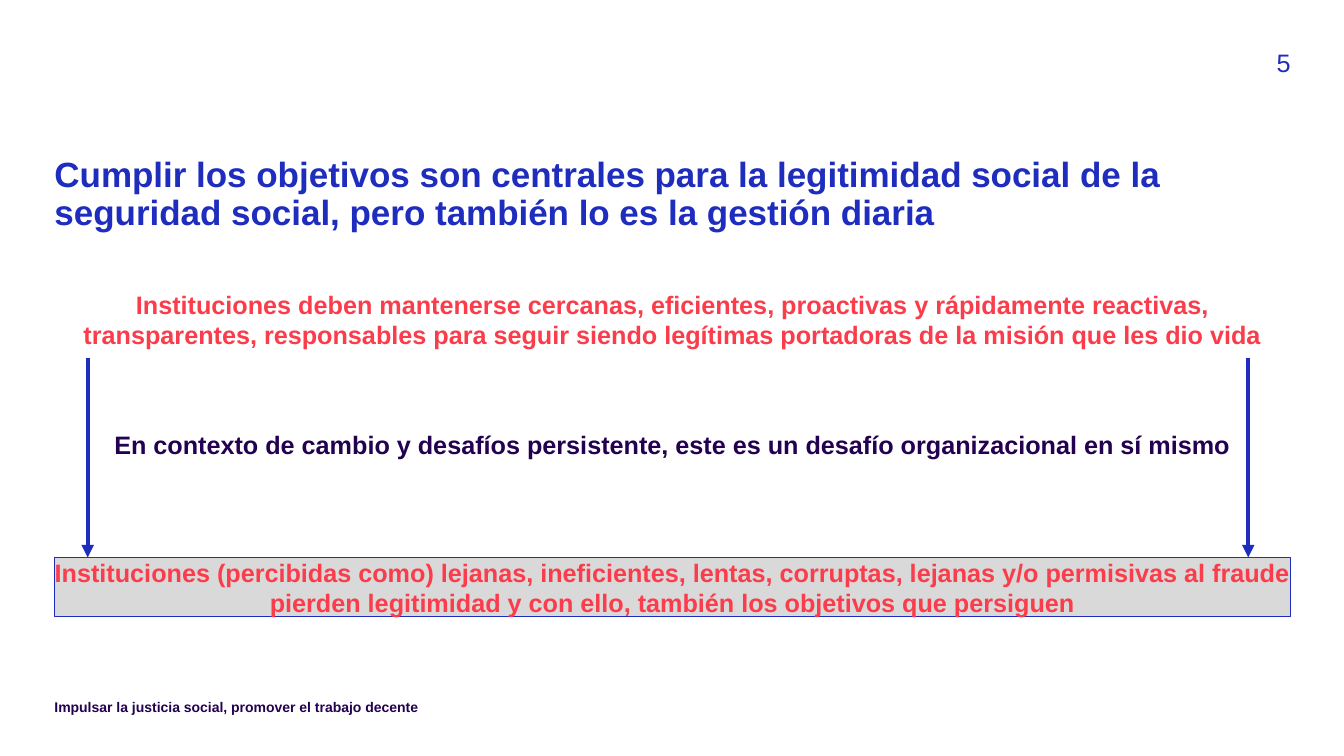
import pptx
import pptx.dml.color
import pptx.enum.shapes
import pptx.enum.text
import pptx.oxml
import pptx.oxml.ns
import pptx.util
from pptx.util import Inches

BLUE, RED, PURPLE, GRAY = "1E2DBE", "FA3C4B", "230050", "D9D9D9"
LEFT, WIDTH = 0.54, 12.26
ALIGN = pptx.enum.text.PP_ALIGN
ANCHOR = pptx.enum.text.MSO_ANCHOR


def color(value):
    """Turn a hex string into a colour."""
    return pptx.dml.color.RGBColor.from_string(value)


def set_all(target, values):
    """Set every attribute named in a dict of format values."""
    for name, value in values.items():
        setattr(target, name, value)


def add_xml(parent, tag, **attributes):
    """Append an empty drawing element to a parent."""
    element = pptx.oxml.parse_xml(f'<a:{tag} {pptx.oxml.ns.nsdecls("a")}/>')
    for name, value in attributes.items():
        element.set(name, value)
    parent.append(element)


def place(shape, left, top, width, height):
    """Move and size a shape, in inches."""
    set_all(shape, {"left": Inches(left), "top": Inches(top),
                    "width": Inches(width), "height": Inches(height)})


def write(shape, text, size, hue, bold=True, align=ALIGN.LEFT,
          anchor=ANCHOR.TOP, spacing=1.0):
    """Write one formatted paragraph into a shape without margins."""
    frame = shape.text_frame
    set_all(frame, {"margin_left": 0, "margin_top": 0, "margin_right": 0,
                    "margin_bottom": 0, "word_wrap": True,
                    "auto_size": pptx.enum.text.MSO_AUTO_SIZE.NONE,
                    "vertical_anchor": anchor})
    frame.text = text
    paragraph = frame.paragraphs[0]
    set_all(paragraph, {"alignment": align, "line_spacing": spacing,
                        "space_before": pptx.util.Pt(0)})
    font = paragraph.runs[0].font
    set_all(font, {"name": "Arial", "size": pptx.util.Pt(size), "bold": bold})
    font.color.rgb = color(hue)


def fill_body(body, top, height, text, hue):
    """Place a body placeholder as a centred statement without bullet."""
    place(body, LEFT, top, WIDTH, height)
    write(body, text, 18, hue, align=ALIGN.CENTER)
    properties = body.text_frame.paragraphs[0]._p.get_or_add_pPr()
    set_properties = {"marL": "0", "indent": "0"}
    for name, value in set_properties.items():
        properties.set(name, value)
    add_xml(properties, "buNone")


def add_label(slide, left, top, width, height, text, size, hue, **style):
    """Add a text box with one line of text."""
    label = slide.shapes.add_textbox(0, 0, 0, 0)
    place(label, left, top, width, height)
    write(label, text, size, hue, **style)


def add_panel(slide, top, height, text):
    """Add the outlined box with the closing statement."""
    panel = slide.shapes.add_shape(
        pptx.enum.shapes.MSO_SHAPE.RECTANGLE, 0, 0, 0, 0)
    place(panel, LEFT, top, WIDTH, height)
    panel.shadow.inherit = False
    panel.fill.solid()
    panel.fill.fore_color.rgb = color(GRAY)
    panel.line.color.rgb = color(BLUE)
    panel.line.width = pptx.util.Pt(0.75)
    write(panel, text, 18, RED, align=ALIGN.CENTER, anchor=ANCHOR.MIDDLE)


def add_down_arrow(slide, x, top, bottom):
    """Add a vertical arrow pointing down."""
    arrow = slide.shapes.add_connector(
        pptx.enum.shapes.MSO_CONNECTOR.STRAIGHT,
        Inches(x), Inches(top), Inches(x), Inches(bottom))
    arrow.line.color.rgb = color(BLUE)
    arrow.line.width = pptx.util.Pt(3)
    add_xml(arrow.line._get_or_add_ln(), "tailEnd", type="triangle")
    add_xml(arrow._element.spPr, "effectLst")


def main():
    """Build and save the slide."""
    deck = pptx.Presentation()
    set_all(deck, {"slide_width": Inches(13.33), "slide_height": Inches(7.5)})
    slide = deck.slides.add_slide(deck.slide_layouts.get_by_name("Two Content"))
    title, demand, challenge = list(slide.placeholders)[:3]

    place(title, LEFT, 1.56, WIDTH, 0.79)
    write(title, "Cumplir los objetivos son centrales para la legitimidad "
          "social de la seguridad social, pero también lo es la gestión diaria",
          25, BLUE, spacing=0.9)
    fill_body(demand, 2.87, 0.79,
              "Instituciones deben mantenerse cercanas, eficientes, proactivas "
              "y rápidamente reactivas, transparentes, responsables para seguir "
              "siendo legítimas portadoras de la misión que les dio vida", RED)
    fill_body(challenge, 4.26, 1.37,
              "En contexto de cambio y desafíos persistente, este es un desafío "
              "organizacional en sí mismo", PURPLE)
    add_label(slide, LEFT, 6.93, 6.13, 0.2,
              "Impulsar la justicia social, promover el trabajo decente",
              10, PURPLE)
    add_label(slide, 12.21, 0.47, 0.59, 0.31, "5", 18, BLUE,
              bold=False, align=ALIGN.RIGHT)
    add_panel(slide, 5.53, 0.59,
              "Instituciones (percibidas como) lejanas, ineficientes, lentas, "
              "corruptas, lejanas y/o permisivas al fraude pierden legitimidad "
              "y con ello, también los objetivos que persiguen")
    for x in (0.87, 12.38):
        add_down_arrow(slide, x, 3.55, 5.53)

    deck.save("out.pptx")


if __name__ == "__main__":
    main()
